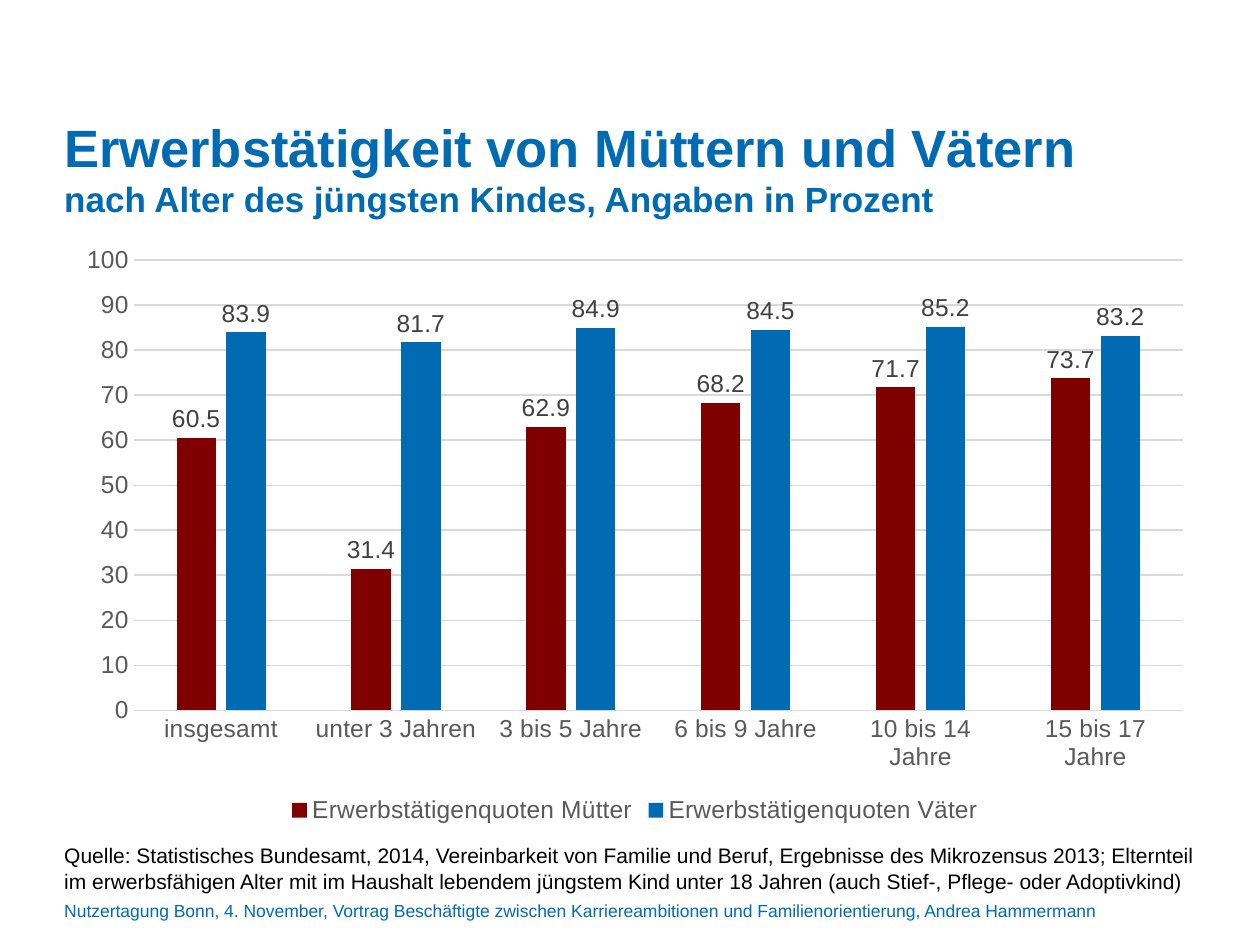
import pptx
import pptx.chart.data
import pptx.dml.color
import pptx.enum.chart
import pptx.enum.text
import pptx.oxml.ns
import pptx.util
from lxml import etree

Inches = pptx.util.Inches
Pt = pptx.util.Pt
enum = pptx.enum.chart

HUES = {"blue": "006AB3", "red": "800000", "black": "000000",
        "text": "595959", "label": "404040", "grid": "D9D9D9"}
LEFT, WIDE = 0.51, 9.06

AGES = ["insgesamt", "unter 3 Jahren", "3 bis 5 Jahre",
        "6 bis 9 Jahre", "10 bis 14 Jahre", "15 bis 17 Jahre"]
RATES = [
    ("Erwerbstätigenquoten Mütter", "red", [60.5, 31.4, 62.9, 68.2, 71.7, 73.7]),
    ("Erwerbstätigenquoten Väter", "blue", [83.9, 81.7, 84.9, 84.5, 85.2, 83.2]),
]


def apply(item, values):
    for name, value in values.items():
        setattr(item, name, value)


def tint(name):
    return pptx.dml.color.RGBColor.from_string(HUES[name])


def style(font, size, hue, bold=False):
    apply(font, {"name": "Arial", "size": Pt(size), "bold": bold})
    font.color.rgb = tint(hue)


def paint(fill, hue):
    fill.solid()
    fill.fore_color.rgb = tint(hue)


def rule(line, hue):
    line.color.rgb = tint(hue)
    line.width = Pt(0.75)


def place(shape, box):
    apply(shape, dict(zip(("left", "top", "width", "height"), map(Inches, box))))


def frame(shape):
    """Strip the margins and return the first paragraph, left aligned."""
    text = shape.text_frame
    apply(text, {"margin_left": 0, "margin_top": 0, "margin_right": 0,
                 "margin_bottom": 0, "word_wrap": True,
                 "auto_size": pptx.enum.text.MSO_AUTO_SIZE.NONE,
                 "vertical_anchor": pptx.enum.text.MSO_ANCHOR.TOP})
    para = text.paragraphs[0]
    apply(para, {"alignment": pptx.enum.text.PP_ALIGN.LEFT, "space_before": Pt(0)})
    return para


def write(para, text, size, hue, bold=False):
    run = para.add_run()
    run.text = text
    style(run.font, size, hue, bold)


def add_head(slide, box):
    title = slide.shapes.title
    place(title, box)
    para = frame(title)
    write(para, "Erwerbstätigkeit von Müttern und Vätern", 30, "blue", True)
    para.add_line_break()
    write(para, "nach Alter des jüngsten Kindes, Angaben in Prozent", 20, "blue", True)


def add_rates(slide, box):
    data = pptx.chart.data.CategoryChartData(number_format="0.0")
    data.categories = AGES
    for name, _, values in RATES:
        data.add_series(name, values)
    chart = slide.shapes.add_chart(
        enum.XL_CHART_TYPE.COLUMN_CLUSTERED, *map(Inches, box), data).chart
    style(chart.font, 14, "black")
    apply(chart, {"has_title": False, "has_legend": True})
    apply(chart.legend, {"position": enum.XL_LEGEND_POSITION.BOTTOM,
                         "include_in_layout": False})
    style(chart.legend.font, 14, "text")

    plot = chart.plots[0]
    apply(plot, {"gap_width": 219, "overlap": -27, "vary_by_categories": False})
    for series, (_, hue, _) in zip(plot.series, RATES):
        paint(series.format.fill, hue)
        series.invert_if_negative = False
        labels = series.data_labels
        apply(labels, {"show_value": True, "number_format": "0.0",
                       "number_format_is_linked": False,
                       "position": enum.XL_LABEL_POSITION.OUTSIDE_END})
        style(labels.font, 14, "label")

    cats, vals = chart.category_axis, chart.value_axis
    for axis in (cats, vals):
        apply(axis, {"major_tick_mark": enum.XL_TICK_MARK.NONE,
                     "minor_tick_mark": enum.XL_TICK_MARK.NONE})
        style(axis.tick_labels.font, 14, "text")
    rule(cats.format.line, "grid")
    apply(vals, {"minimum_scale": 0, "maximum_scale": 100, "major_unit": 10,
                 "has_major_gridlines": True})
    apply(vals.tick_labels, {"number_format": "0", "number_format_is_linked": False})
    vals.format.line.fill.background()
    rule(vals.major_gridlines.format.line, "grid")


def add_source(slide, box):
    body = slide.placeholders[1]
    place(body, box)
    para = frame(body)
    props = para._p.get_or_add_pPr()
    props.set("marL", "0")
    props.set("indent", "0")
    etree.SubElement(props, pptx.oxml.ns.qn("a:buNone"))
    write(para, "Quelle: Statistisches Bundesamt, 2014, Vereinbarkeit von Familie "
          "und Beruf, Ergebnisse des Mikrozensus 2013; Elternteil im "
          "erwerbsfähigen Alter mit im Haushalt lebendem jüngstem Kind unter "
          "18 Jahren (auch Stief-, Pflege- oder Adoptivkind)", 12, "black")


def add_foot(slide, box):
    para = frame(slide.shapes.add_textbox(*map(Inches, box)))
    write(para, "Nutzertagung Bonn, 4. November, Vortrag Beschäftigte zwischen "
          "Karriereambitionen und Familienorientierung, Andrea Hammermann",
          10, "blue")


def main():
    deck = pptx.Presentation()
    apply(deck, {"slide_width": Inches(10), "slide_height": Inches(7.5)})
    slide = deck.slides.add_slide(deck.slide_layouts[1])
    add_head(slide, (LEFT, 0.91, WIDE, 0.5))
    add_rates(slide, (LEFT, 1.86, WIDE, 4.72))
    add_source(slide, (LEFT, 6.69, WIDE, 0.2))
    add_foot(slide, (LEFT, 7.14, 8.51, 0.22))
    deck.save("out.pptx")


if __name__ == "__main__":
    main()
